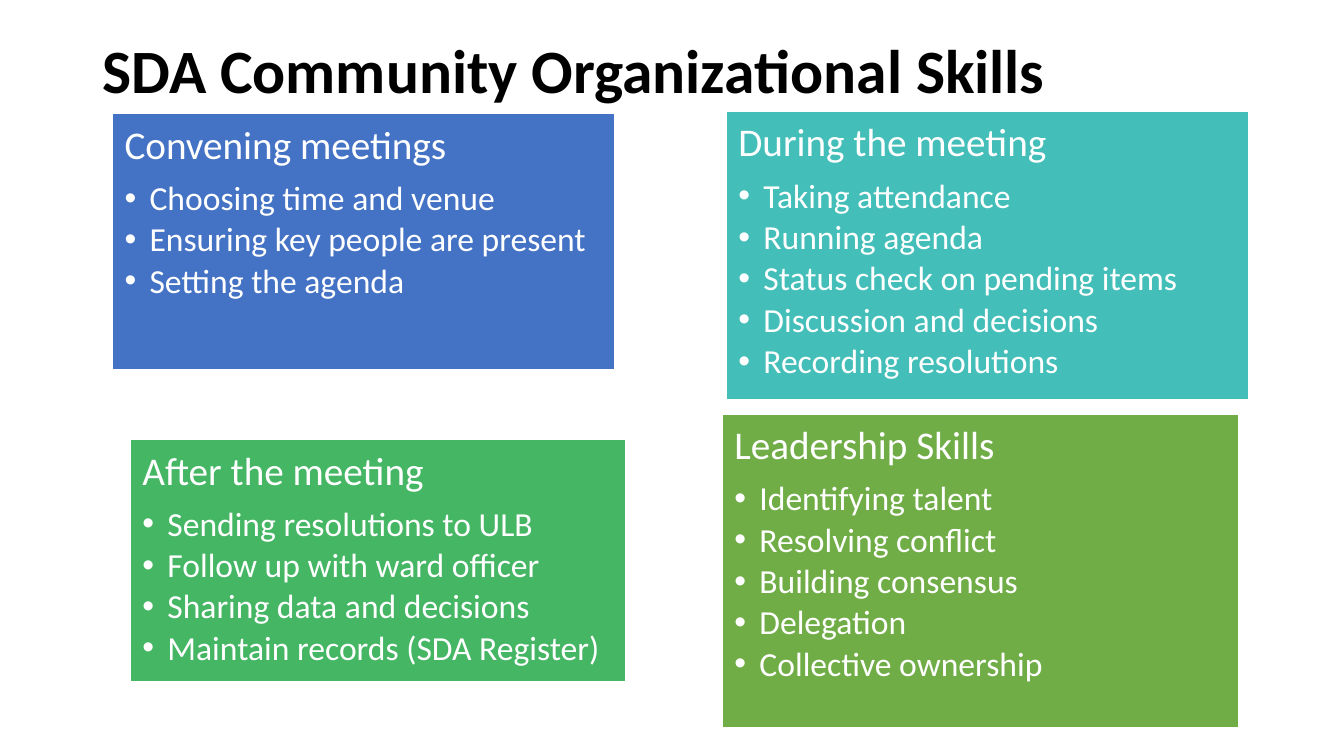
from lxml.etree import SubElement
from pptx import Presentation
from pptx.dml.color import RGBColor
from pptx.enum.shapes import MSO_SHAPE
from pptx.enum.text import MSO_ANCHOR, PP_ALIGN
from pptx.oxml.ns import qn
from pptx.util import Cm, Pt

FONT = "Calibri"
# Each card: box (left, top, width, height in cm), fill, heading, bullets
CARDS = [
    ((2.84, 2.86, 12.66, 6.46), "4472C4", "Convening meetings",
     ["Choosing time and venue", "Ensuring key people are present",
      "Setting the agenda"]),
    ((18.31, 2.8, 13.16, 7.27), "43BEB9", "During the meeting",
     ["Taking attendance", "Running agenda", "Status check on pending items",
      "Discussion and decisions", "Recording resolutions"]),
    ((3.29, 11.07, 12.47, 6.12), "45B664", "After the meeting",
     ["Sending resolutions to ULB", "Follow up with ward officer",
      "Sharing data and decisions", "Maintain records (SDA Register)"]),
    ((18.21, 10.43, 13, 7.9), "70AD47", "Leadership Skills",
     ["Identifying talent", "Resolving conflict", "Building consensus",
      "Delegation", "Collective ownership"]),
]


def rgb(value):
    return RGBColor.from_string(value)


def format_paragraph(p, size, color, after=0, bold=False):
    p.alignment = PP_ALIGN.LEFT
    p.line_spacing = 0.9
    p.space_before = Pt(0)
    p.space_after = Pt(after)
    for r in p.runs:
        r.font.name = FONT
        r.font.size = Pt(size)
        r.font.bold = bold
        r.font.color.rgb = rgb(color)


def add_bullet(p, indent):
    pPr = p._p.get_or_add_pPr()
    pPr.set("marL", str(indent))
    pPr.set("indent", str(-indent))
    SubElement(pPr, qn("a:buFont"), typeface="Arial")
    SubElement(pPr, qn("a:buChar"), char="•")


def add_title(slide, text, box):
    title = slide.shapes.title
    title.left, title.top, title.width, title.height = map(Cm, box)
    tf = title.text_frame
    tf.text = text
    tf.vertical_anchor = MSO_ANCHOR.MIDDLE
    format_paragraph(tf.paragraphs[0], 44, "000000", bold=True)


def add_card(slide, box, fill, heading, bullets):
    sp = slide.shapes.add_shape(MSO_SHAPE.RECTANGLE, *map(Cm, box))
    sp.shadow.inherit = False
    sp.fill.solid()
    sp.fill.fore_color.rgb = rgb(fill)
    sp.line.color.rgb = rgb("FFFFFF")
    sp.line.width = Pt(1)

    tf = sp.text_frame
    tf.word_wrap = True
    tf.vertical_anchor = MSO_ANCHOR.TOP
    tf.margin_left = tf.margin_right = Cm(0.3)
    tf.margin_top = tf.margin_bottom = Cm(0.3)

    # Heading
    tf.text = heading
    format_paragraph(tf.paragraphs[0], 28, "FFFFFF", after=9.8)

    # Bullet list
    for bullet in bullets:
        p = tf.add_paragraph()
        p.text = bullet
        p.level = 1
        add_bullet(p, Cm(0.63))
        format_paragraph(p, 24, "FFFFFF", after=3.6)


def main():
    prs = Presentation()
    prs.slide_width, prs.slide_height = Cm(33.87), Cm(19.05)
    slide = prs.slides.add_slide(prs.slide_layouts[5])
    add_title(slide, "SDA Community Organizational Skills",
              (2.33, 0, 29.21, 3.7))
    for card in CARDS:
        add_card(slide, *card)
    prs.save("out.pptx")


if __name__ == "__main__":
    main()
